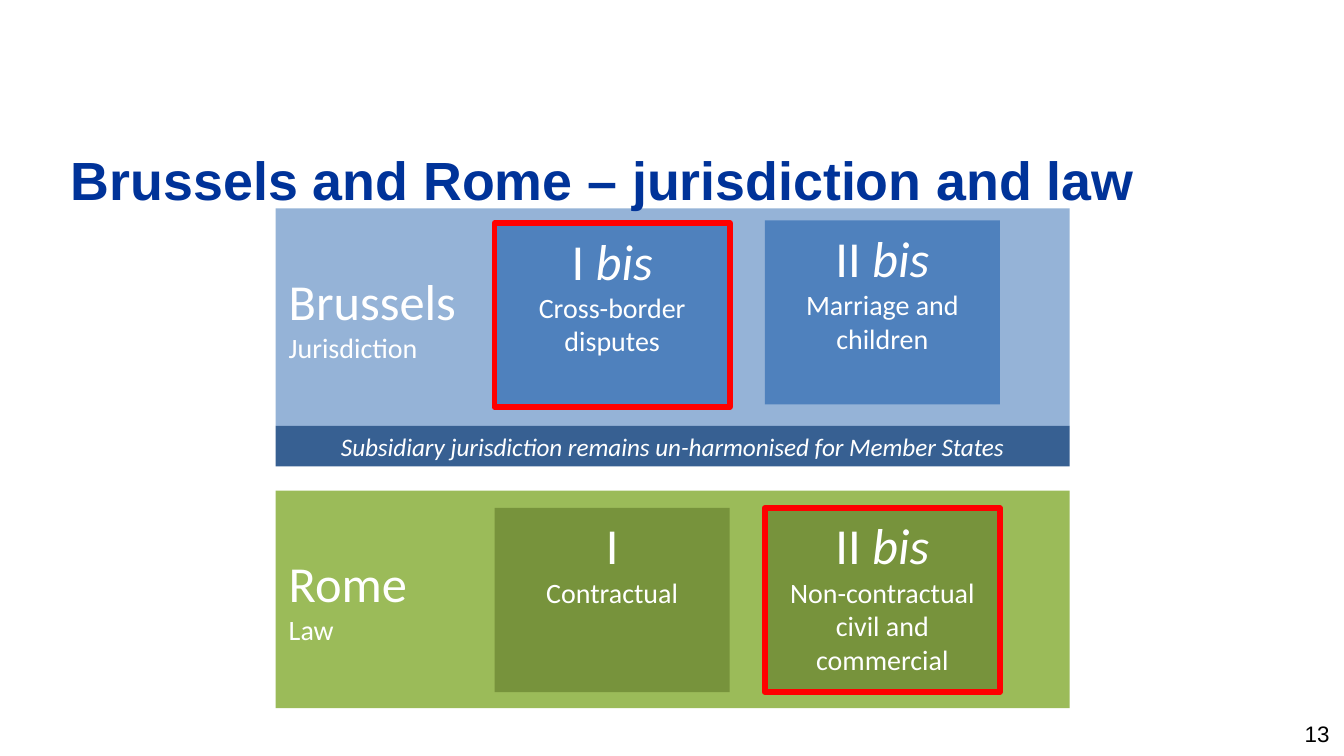
from pptx import Presentation
from pptx.dml.color import RGBColor
from pptx.enum import shapes, text
from pptx.util import Inches, Pt

WHITE, RED = "FFFFFF", "FF0000"
LEFT, CENTER, RIGHT = text.PP_ALIGN.LEFT, text.PP_ALIGN.CENTER, text.PP_ALIGN.RIGHT
TOP, MIDDLE = text.MSO_ANCHOR.TOP, text.MSO_ANCHOR.MIDDLE
BAND_LEFT, BAND_WIDTH, BAND_HEIGHT = 2.05, 5.91, 1.62
CARD_LEFTS, CARD_WIDTH, CARD_HEIGHT = (3.68, 5.69), 1.75, 1.37


def color(value):
    return RGBColor.from_string(value)


def write(box, lines, align=LEFT, anchor=TOP, font="Calibri", ink=WHITE, bold=False):
    """Each line is a list of (text, size, italic) spans."""
    frame = box.text_frame
    frame.word_wrap = True
    frame.vertical_anchor = anchor
    for index, spans in enumerate(lines):
        para = frame.paragraphs[0] if index == 0 else frame.add_paragraph()
        para.alignment = align
        for words, size, italic in spans:
            span = para.add_run()
            span.text = words
            span.font.name = font
            span.font.size = Pt(size)
            span.font.italic = italic
            span.font.bold = bold
            span.font.color.rgb = color(ink)


def add_label(page, left, top, width, height, lines, **style):
    box = page.shapes.add_textbox(*map(Inches, (left, top, width, height)))
    write(box, lines, font="Arial", **style)


def add_block(page, left, top, width, height, fill, lines, outline=None, **style):
    block = page.shapes.add_shape(
        shapes.MSO_SHAPE.RECTANGLE, *map(Inches, (left, top, width, height)))
    block.shadow.inherit = False
    block.fill.solid()
    block.fill.fore_color.rgb = color(fill)
    if outline:
        block.line.color.rgb = color(outline)
        block.line.width = Pt(3)
    else:
        block.line.fill.background()
    write(block, lines, **style)


def add_band(page, top, fill, name, topic):
    lines = [[(name, 27, False)], [(topic, 15, False)]]
    add_block(page, BAND_LEFT, top, BAND_WIDTH, BAND_HEIGHT, fill, lines, anchor=MIDDLE)


def add_card(page, column, top, fill, number, suffix, topic, outline=None):
    heading = [(number, 27, False)]
    if suffix:
        heading = [(number + " ", 27, False), (suffix, 27, True)]
    add_block(page, CARD_LEFTS[column], top, CARD_WIDTH, CARD_HEIGHT, fill,
              [heading, [(topic, 15, False)]], outline=outline, align=CENTER)


def main():
    deck = Presentation()
    deck.slide_width = Inches(10)
    deck.slide_height = deck.slide_width * 9 // 16
    page = deck.slides.add_slide(deck.slide_layouts[6])

    # Slide number
    add_label(page, 8.07, 5.29, 1.92, 0.33, [[("13", 12, False)]],
              align=RIGHT, anchor=MIDDLE, ink="000000")

    # Bands for the two families of regulations
    add_band(page, 1.55, "95B3D7", "Brussels", "Jurisdiction")
    add_band(page, 3.65, "9BBB59", "Rome", "Law")

    # Regulations, the key ones outlined in red
    blue, green = "4F81BD", "77933C"
    add_card(page, 0, 1.66, blue, "I", "bis", "Cross-border disputes", RED)
    add_card(page, 1, 3.78, green, "II", "bis", "Non-contractual civil and commercial", RED)
    add_card(page, 1, 1.64, blue, "II", "bis", "Marriage and children")
    add_card(page, 0, 3.78, green, "I", "", "Contractual")

    # Footnote strip under the Brussels band
    note = "Subsidiary jurisdiction remains un-harmonised for Member States"
    add_block(page, BAND_LEFT, 1.55 + BAND_HEIGHT, BAND_WIDTH, 0.3, "376092",
              [[(note, 13.5, True)]], align=CENTER, anchor=MIDDLE)

    # Title
    add_label(page, 0.43, 1.04, 9.14, 0.53,
              [[("Brussels and Rome – jurisdiction and law", 28.8, False)]],
              ink="003399", bold=True)

    deck.save("out.pptx")


if __name__ == "__main__":
    main()
